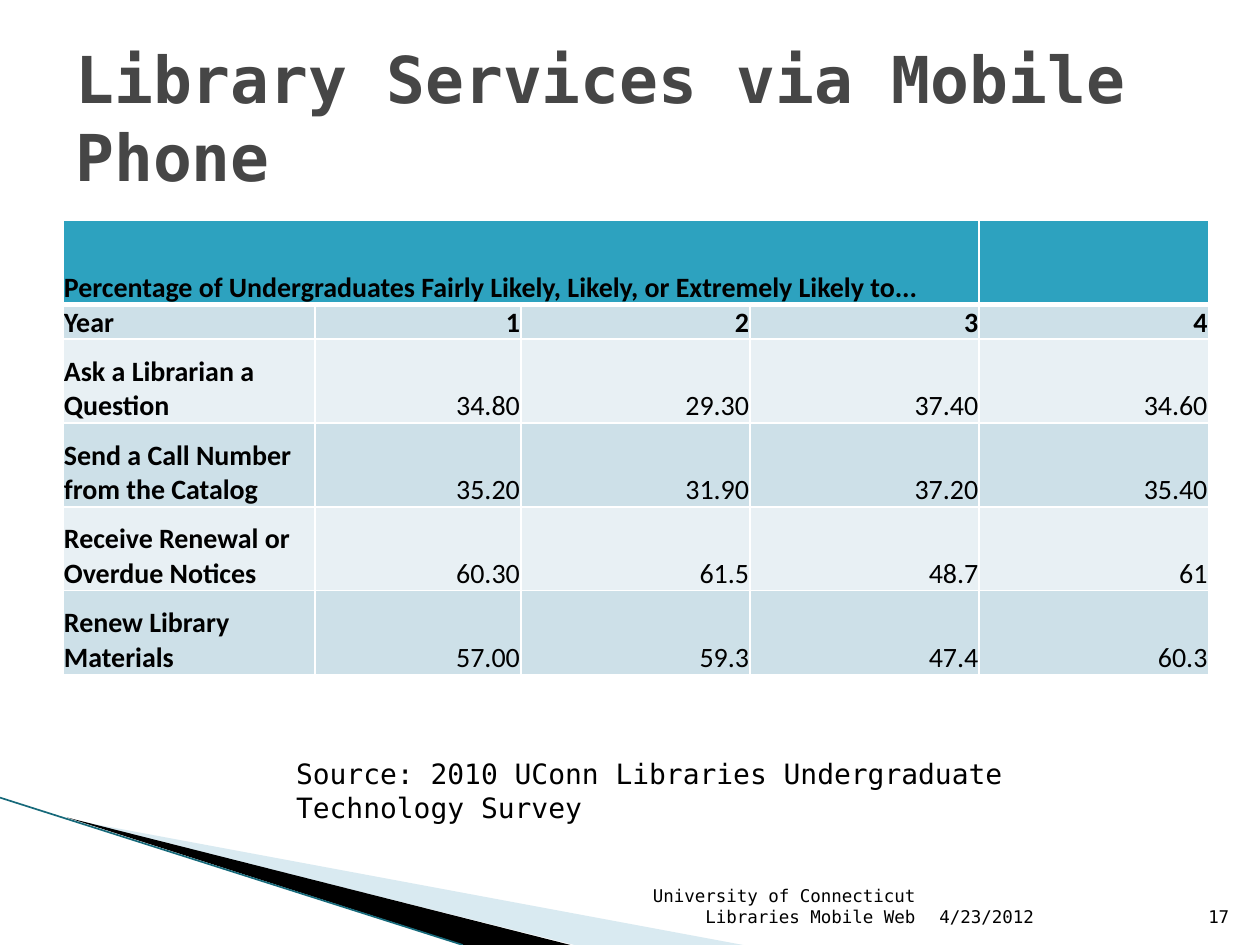
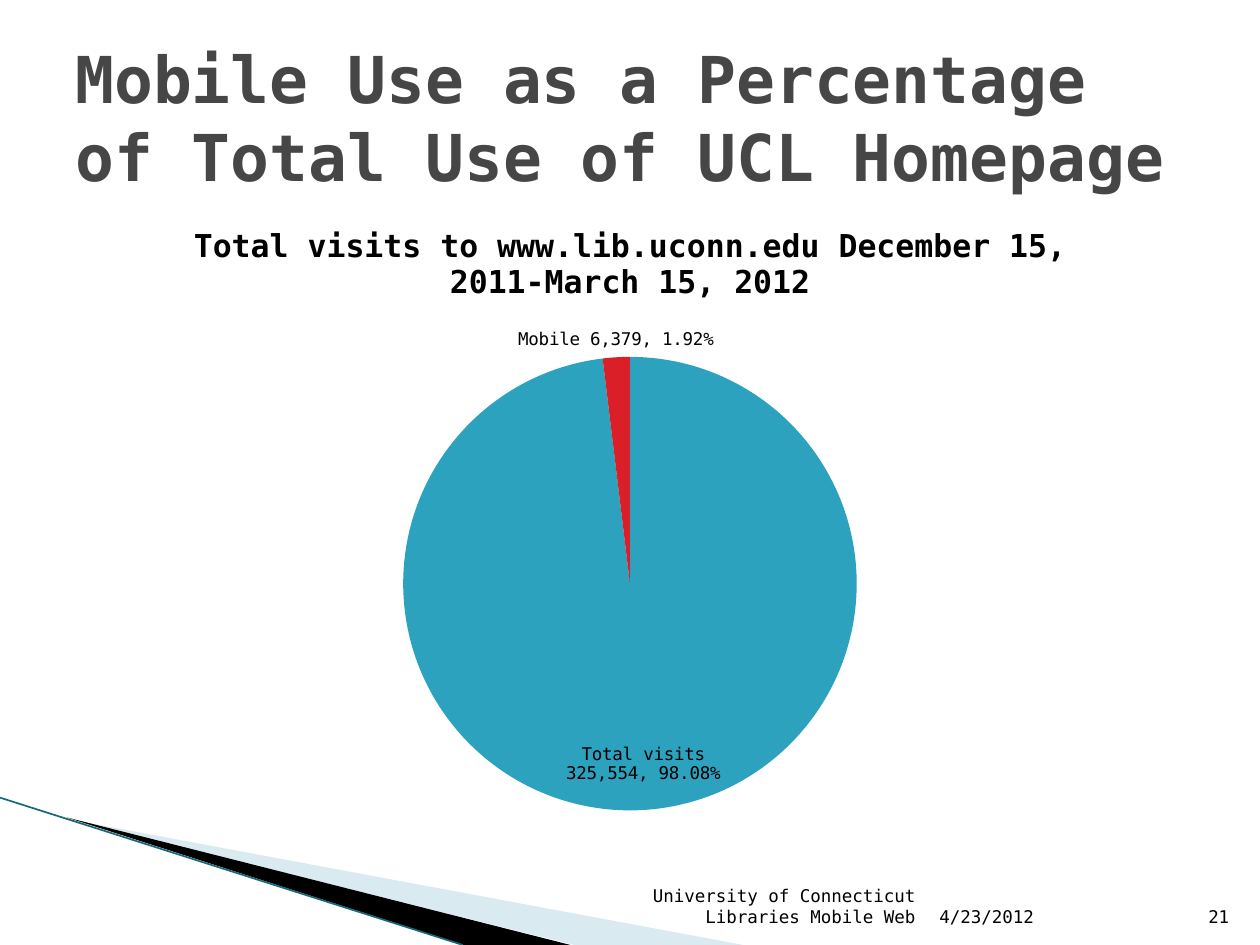
from lxml.etree import SubElement as Sub
from pptx import Presentation as Deck
from pptx.chart.data import CategoryChartData as Data
from pptx.dml.color import RGBColor as RGB
from pptx.enum.chart import XL_CHART_TYPE as Kind, XL_LABEL_POSITION as Spot
from pptx.enum.shapes import MSO_CONNECTOR as Link
from pptx.enum.text import MSO_ANCHOR as Anchor, PP_ALIGN as Align
from pptx.oxml.ns import qn
from pptx.util import Cm, Pt

BLACK = RGB(0x00, 0x00, 0x00)
WHITE = RGB(0xFF, 0xFF, 0xFF)
GREY = RGB(0x46, 0x46, 0x46)
TEAL = RGB(0x2D, 0xA2, 0xBF)
DEEP = RGB(0x16, 0x69, 0x7A)
MIST = RGB(0xA0, 0xCB, 0xDC)
RED = RGB(0xDA, 0x1F, 0x28)
BANDS = RGB(0xCD, 0xE0, 0xE8), RGB(0xE8, 0xF0, 0xF4)

MONO = "DejaVu Sans Mono"
TITLE = {"name": MONO, "size": Pt(36.9), "bold": True}
BODY = {"name": MONO, "size": Pt(16), "bold": False}
SMALL = {"name": MONO, "size": Pt(10), "bold": False}
HEAD = {"name": MONO, "size": Pt(18), "bold": True}
CELL = {"name": "Calibri", "size": Pt(16), "bold": False}
STRONG = CELL | {"bold": True}

ROWS = [
    ["Year", "1", "2", "3", "4"],
    ["Ask a Librarian a Question", "34.80", "29.30", "37.40", "34.60"],
    ["Send a Call Number from the Catalog", "35.20", "31.90", "37.20", "35.40"],
    ["Receive Renewal or Overdue Notices", "60.30", "61.5", "48.7", "61"],
    ["Renew Library Materials", "57.00", "59.3", "47.4", "60.3"],
]


def style(font, form, color=BLACK):
    for key, value in form.items():
        setattr(font, key, value)
    font.color.rgb = color


def place_by(layout, parts):
    manual = Sub(layout, qn("c:manualLayout"))
    for key, value in parts.items():
        Sub(manual, qn("c:" + key), val=str(value))


class Page:
    def __init__(self, deck, title, number):
        self.slide = deck.slides.add_slide(deck.slide_layouts[6])
        self.shapes = self.slide.shapes
        self.band([(1.4, 16.52), (14.98, 19.05), (11.58, 19.05)], MIST, 40)
        self.band([(1.35, 16.48), (11.5, 19.05), (9.35, 19.05)], BLACK)
        self.line((0, 16.08), (9.33, 19.05), DEEP)
        self.text(title, (1.27, 0.76, 22.86, 3.18), TITLE, color=GREY,
                  anchor=Anchor.MIDDLE)
        foot = [
            ("University of Connecticut Libraries Mobile Web", 12.17, 6.53, Align.RIGHT),
            ("4/23/2012", 18.69, 5.33, Align.LEFT),
            (str(number), 24.01, 1.02, Align.RIGHT),
        ]
        for words, left, width, align in foot:
            self.text(words, (left, 17.79, width, 1.02), SMALL, align,
                      anchor=Anchor.BOTTOM)

    def band(self, points, color, alpha=100):
        spots = [(Cm(x), Cm(y)) for x, y in points]
        build = self.shapes.build_freeform(*spots[0])
        build.add_line_segments(spots[1:])
        shape = build.convert_to_shape()
        shape.shadow.inherit = False
        shape.fill.solid()
        shape.fill.fore_color.rgb = color
        shape.line.fill.background()
        if alpha < 100:
            tint = shape.fill._xPr.find(".//" + qn("a:srgbClr"))
            Sub(tint, qn("a:alpha"), val=str(alpha * 1000))

    def line(self, start, end, color):
        ends = [Cm(value) for value in start + end]
        line = self.shapes.add_connector(Link.STRAIGHT, *ends)
        line.line.color.rgb = color
        line.line.width = Pt(0.95)
        Sub(line._element.spPr, qn("a:effectLst"))

    def text(self, words, place, form, align=Align.LEFT, color=BLACK,
             anchor=Anchor.TOP):
        frame = self.shapes.add_textbox(*map(Cm, place)).text_frame
        frame.word_wrap = True
        frame.vertical_anchor = anchor
        para = frame.paragraphs[0]
        para.text = words
        para.alignment = align
        style(para.runs[0].font, form, color)

    def edge(self, cell, sides):
        props = cell._tc.get_or_add_tcPr()
        for side, width in sides.items():
            line = Sub(props, qn("a:ln" + side), w=str(Pt(width)))
            fill = Sub(line, qn("a:solidFill"))
            Sub(fill, qn("a:srgbClr"), val=str(WHITE))

    def cell(self, cell, words, fill, form, align, sides):
        self.edge(cell, sides)
        cell.fill.solid()
        cell.fill.fore_color.rgb = fill
        gaps = {"left": 0.02, "right": 0.02, "top": 0.02, "bottom": 0}
        for side, gap in gaps.items():
            setattr(cell, "margin_" + side, Cm(gap))
        cell.vertical_anchor = Anchor.BOTTOM
        para = cell.text_frame.paragraphs[0]
        para.text = words
        para.alignment = align
        style(para.font, form)
        for run in para.runs:
            style(run.font, form)

    def table(self, head, rows, place, widths, heights):
        count = len(widths)
        lines = [[head] + [""] * (count - 1)] + rows
        grid = self.shapes.add_table(len(lines), count, *map(Cm, place)).table
        for col, width in zip(grid.columns, widths):
            col.width = Cm(width)
        for row, height in zip(grid.rows, heights):
            row.height = Cm(height)
        for i, line in enumerate(lines):
            fill = BANDS[(i - 1) % 2] if i else TEAL
            sides = {"L": 1, "R": 1, "T": 3 if i == 1 else 1, "B": 1 if i else 3}
            for j, words in enumerate(line):
                form = STRONG if i < 2 or j == 0 else CELL
                align = Align.RIGHT if i and j else Align.LEFT
                self.cell(grid.cell(i, j), words, fill, form, align, sides)
        grid.cell(0, 0).merge(grid.cell(0, count - 2))

    def pie(self, title, values, labels, colors, place, plot, shift):
        data = Data(number_format="#,##0")
        data.categories = [str(i + 1) for i in range(len(values))]
        data.add_series("Series 1", values)
        chart = self.shapes.add_chart(Kind.PIE, *map(Cm, place), data).chart
        style(chart.font, SMALL)
        chart.has_legend = False
        chart.has_title = True
        chart.chart_title.include_in_layout = False
        para = chart.chart_title.text_frame.paragraphs[0]
        para.text = title
        style(para.runs[0].font, HEAD)
        chart.plots[0].vary_by_categories = True
        series = chart.plots[0].series[0]
        form = {"show_value": True, "number_format": "#,##0",
                "number_format_is_linked": False}
        for key, value in form.items():
            setattr(series.data_labels, key, value)
        spots = Spot.INSIDE_END, Spot.OUTSIDE_END
        for i, (words, color, spot) in enumerate(zip(labels, colors, spots)):
            point = series.points[i]
            point.format.fill.solid()
            point.format.fill.fore_color.rgb = color
            point.format.line.fill.background()
            para = point.data_label.text_frame.paragraphs[0]
            para.text = words
            style(para.runs[0].font, SMALL)
            point.data_label.position = spot
        self.fit(chart, plot)
        self.nudge(series, shift)

    def fit(self, chart, plot):
        area = chart._chartSpace.chart.plotArea
        for old in area.findall(qn("c:layout")):
            area.remove(old)
        layout = Sub(area, qn("c:layout"))
        area.insert(0, layout)
        parts = {"layoutTarget": "inner", "xMode": "edge", "yMode": "edge"}
        place_by(layout, parts | dict(zip("xywh", plot)))

    def nudge(self, series, shift):
        label = series._element.find(".//" + qn("c:dLbl"))
        layout = Sub(label, qn("c:layout"))
        label.insert(1, layout)
        place_by(layout, dict(zip("xy", shift)))


def main():
    deck = Deck()
    deck.slide_width, deck.slide_height = Cm(25.4), Cm(19.05)

    page = Page(deck, "Library Services via Mobile Phone", 17)
    page.table(
        "Percentage of Undergraduates Fairly Likely, Likely, or Extremely Likely to...",
        ROWS, (1.27, 4.45, 23.09, 9.1),
        [5.08, 4.15] + [4.62] * 3, [1.69, 0.64] + [1.69] * 4)
    page.text("Source: 2010 UConn Libraries Undergraduate Technology Survey",
              (5.72, 15.13, 18.42, 0.94), BODY)

    page = Page(deck, "Mobile Use as a Percentage of Total Use of UCL Homepage", 21)
    page.pie(
        "Total visits to www.lib.uconn.edu December 15, 2011-March 15, 2012",
        [325600, 6379],
        ["Total visits 325,554, 98.08%", "Mobile 6,379, 1.92%"],
        [TEAL, RED], (1.27, 4.02, 22.86, 12.7), (0.3, 0.25, 0.4, 0.72),
        (0, -0.03))

    deck.save("out.pptx")


if __name__ == "__main__":
    main()
